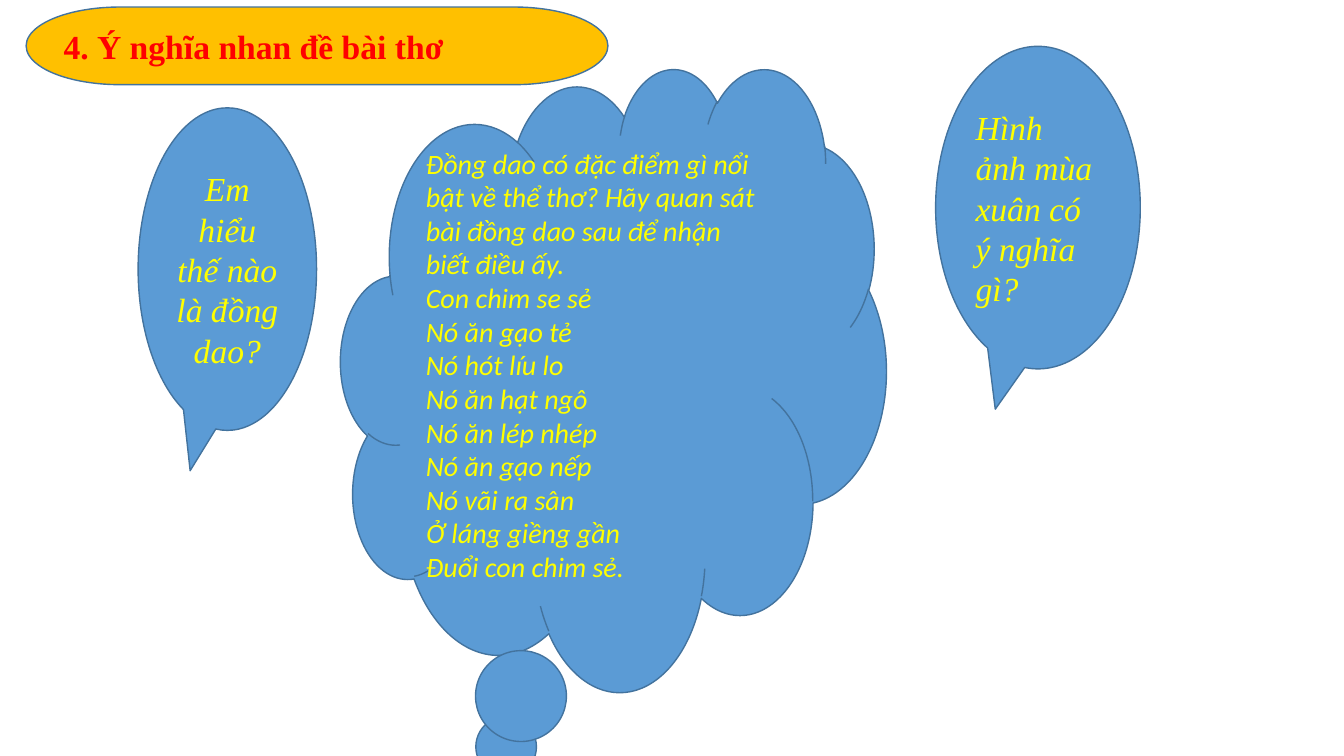
from dataclasses import dataclass

from pptx import Presentation
from pptx.dml.color import RGBColor
from pptx.enum.shapes import MSO_SHAPE as Preset
from pptx.enum.text import MSO_ANCHOR as Anchor, MSO_AUTO_SIZE as AutoSize, PP_ALIGN as Align
from pptx.util import Inches, Pt


@dataclass(frozen=True)
class Theme:
    banner: RGBColor = RGBColor(0xFF, 0xC0, 0x00)
    callout: RGBColor = RGBColor(0x5B, 0x9B, 0xD5)
    outline: RGBColor = RGBColor(0x43, 0x73, 0x9E)
    heading: RGBColor = RGBColor(0xFF, 0x00, 0x00)
    text: RGBColor = RGBColor(0xFF, 0xFF, 0x00)
    serif: str = "Times New Roman"
    sans: str = "Calibri"
    large: Pt = Pt(24)
    medium: Pt = Pt(20)


theme = Theme()


def add_filled_shape(preset, box, color):
    shape = slide.shapes.add_shape(preset, *map(Inches, box))
    shape.shadow.inherit = False
    shape.fill.solid()
    shape.fill.fore_color.rgb = color
    shape.line.color.rgb = theme.outline
    shape.line.width = Pt(1)
    return shape


def write_text(shape, lines, align, color, font_format):
    frame = shape.text_frame
    frame.text = "\n".join(lines)
    frame.word_wrap = True
    frame.auto_size = AutoSize.NONE
    frame.vertical_anchor = Anchor.MIDDLE
    for paragraph in frame.paragraphs:
        paragraph.alignment = align
        for run in paragraph.runs:
            run.font.color.rgb = color
            for attribute, value in font_format.items():
                setattr(run.font, attribute, value)


presentation = Presentation()
presentation.slide_width = Inches(13.33)
presentation.slide_height = Inches(7.5)
slide = presentation.slides.add_slide(presentation.slide_layouts[5])

# Heading banner; the title sits inside its rounded ends
banner_box = (0.26, 0.07, 5.77, 0.77)
add_filled_shape(Preset.FLOWCHART_TERMINATOR, banner_box, theme.banner)

title = slide.shapes.title
left, top, width, height = banner_box
rounded_end = 0.27
title_place = {
    "left": left + rounded_end,
    "top": top,
    "width": width - 2 * rounded_end,
    "height": height,
}
for attribute, value in title_place.items():
    setattr(title, attribute, Inches(value))
write_text(title, ["4. Ý nghĩa nhan đề bài thơ"], Align.LEFT, theme.heading,
           {"name": theme.serif, "size": theme.large, "bold": True})
# Bring the title in front of the banner
slide.shapes.element.append(title.element)

# Question bubbles and the nursery rhyme cloud
question_format = {"name": theme.serif, "size": theme.large, "italic": True}
rhyme_format = {"name": theme.sans, "size": theme.medium, "italic": True}
rhyme_lines = [
    "Đồng dao có đặc điểm gì nổi bật về thể thơ? "
    "Hãy quan sát bài đồng dao sau để nhận biết điều ấy.",
    "Con chim se sẻ",
    "Nó ăn gạo tẻ",
    "Nó hót líu lo",
    "Nó ăn hạt ngô",
    "Nó ăn lép nhép",
    "Nó ăn gạo nếp",
    "Nó vãi ra sân",
    "Ở láng giềng gần",
    "Đuổi con chim sẻ.",
]
callouts = [
    (Preset.OVAL_CALLOUT, (1.37, 1.07, 1.77, 3.2), Align.CENTER, question_format,
     ["Em hiểu thế nào là đồng dao?"]),
    (Preset.OVAL_CALLOUT, (9.28, 0.46, 2.03, 3.2), Align.LEFT, question_format,
     ["Hình ảnh mùa xuân có ý nghĩa gì?"]),
    (Preset.CLOUD_CALLOUT, (3.38, 0.67, 5.41, 6.18), Align.LEFT, rhyme_format,
     rhyme_lines),
]
for preset, box, align, font_format, lines in callouts:
    callout = add_filled_shape(preset, box, theme.callout)
    write_text(callout, lines, align, theme.text, font_format)

presentation.save("out.pptx")
